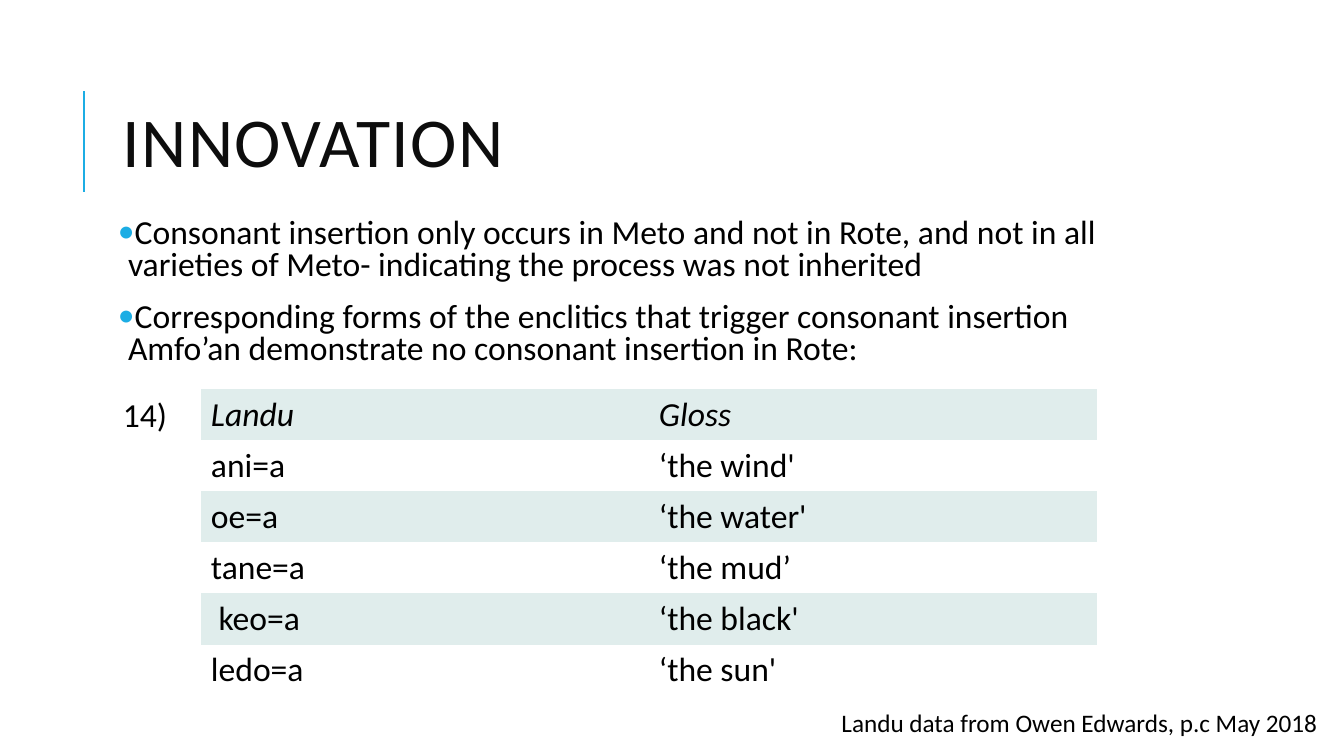
from typing import NamedTuple

from lxml import etree
from pptx import Presentation
from pptx import util as u
from pptx.dml.color import RGBColor
from pptx.enum import shapes, text
from pptx.oxml import ns

FONT = "Calibri"
BLACK = RGBColor(0x00, 0x00, 0x00)
TITLE_INK = RGBColor(0x0D, 0x0D, 0x0D)
ACCENT = RGBColor(0x1C, 0xAD, 0xE4)
BAND = RGBColor(0xE0, 0xED, 0xEC)
NO_GRID_STYLE = "{2D5ABB26-0587-4C30-8999-92F81FD0307C}"

BODY_SIZE = 24
ROW_HEIGHT = 36.5
COLUMN_WIDTH = 320
KEO_INDENT = 5.4


class TextBox(NamedTuple):
    left: float
    top: float
    width: float
    height: float
    paragraphs: list[str]
    size: float = BODY_SIZE
    color: RGBColor = BLACK
    wrap: bool = True


TITLE = TextBox(80.64, 46, 765.5, 118, ["INNOVATION"], 50, TITLE_INK)
BODY = TextBox(80.64, 152.64, 765.5, 117.5, [
    "Consonant insertion only occurs in Meto and not in Rote, and not in all "
    "varieties of Meto- indicating the process was not inherited",
    "Corresponding forms of the enclitics that trigger consonant insertion "
    "Amfo’an demonstrate no consonant insertion in Rote:",
])
SOURCE_NOTE = TextBox(594, 502, 355, 29,
                      ["Landu data from Owen Edwards, p.c May 2018"], 18, wrap=False)
EXAMPLE_NUMBER = TextBox(80.64, 278, 46, 36, ["14)"], wrap=False)

GLOSSES = [
    ("Landu", "Gloss"),
    ("ani=a", "‘the wind'"),
    ("oe=a", "‘the water'"),
    ("tane=a", "‘the mud’"),
    ("keo=a", "‘the black'"),
    ("ledo=a", "‘the sun'"),
]


def style_runs(para, size: float, color: RGBColor, italic: bool = False) -> None:
    for span in para.runs:
        span.font.name = FONT
        span.font.size = u.Pt(size)
        span.font.color.rgb = color
        span.font.italic = italic


def add_text(page, item: TextBox):
    box = page.shapes.add_textbox(u.Pt(item.left), u.Pt(item.top),
                                  u.Pt(item.width), u.Pt(item.height))
    frame = box.text_frame
    frame.word_wrap = item.wrap
    frame.text = "\n".join(item.paragraphs)
    for para in frame.paragraphs:
        style_runs(para, item.size, item.color)
    return frame


def add_title(page) -> None:
    frame = add_text(page, TITLE)
    frame.vertical_anchor = text.MSO_ANCHOR.MIDDLE
    para = frame.paragraphs[0]
    para.line_spacing = 0.8
    para.runs[0].font._element.set("spc", "100")


def add_bullet(para) -> None:
    props = para._p.get_or_add_pPr()
    props.set("marL", str(u.Pt(7.2)))
    props.set("indent", str(u.Pt(-7.2)))
    color = etree.SubElement(props, ns.qn("a:buClr"))
    etree.SubElement(color, ns.qn("a:srgbClr"), val=str(ACCENT))
    etree.SubElement(props, ns.qn("a:buFont"), typeface=FONT)
    etree.SubElement(props, ns.qn("a:buChar"), char="•")


def add_body(page) -> None:
    frame = add_text(page, BODY)
    frame.margin_left = frame.margin_right = u.Pt(3.6)
    frame.margin_top = frame.margin_bottom = u.Pt(3.6)
    for index, para in enumerate(frame.paragraphs):
        add_bullet(para)
        para.line_spacing = 0.8
        para.space_before = u.Pt(12 if index else 0)
        para.space_after = u.Pt(2)


def add_accent_line(page) -> None:
    line = page.shapes.add_connector(shapes.MSO_CONNECTOR.STRAIGHT,
                                     u.Pt(60), u.Pt(137), u.Pt(60), u.Pt(65))
    line.line.color.rgb = ACCENT
    line.line.width = u.Pt(1.5)
    etree.SubElement(line._element.spPr, ns.qn("a:effectLst"))


def add_gloss_table(page) -> None:
    holder = page.shapes.add_table(len(GLOSSES), 2, u.Pt(143.5), u.Pt(278),
                                   u.Pt(2 * COLUMN_WIDTH),
                                   u.Pt(ROW_HEIGHT * len(GLOSSES)))
    table = holder.table
    table.first_row = table.horz_banding = False
    next(holder._element.iter(ns.qn("a:tableStyleId"))).text = NO_GRID_STYLE
    for row, words in enumerate(GLOSSES):
        for column, word in enumerate(words):
            cell = table.cell(row, column)
            cell.text_frame.text = word
            style_runs(cell.text_frame.paragraphs[0], BODY_SIZE, BLACK, italic=row == 0)
            if row % 2 == 0:
                cell.fill.solid()
                cell.fill.fore_color.rgb = BAND
            else:
                cell.fill.background()
            if word == "keo=a":
                cell.margin_left = u.Pt(7.2 + KEO_INDENT)


def main() -> None:
    deck = Presentation()
    deck.slide_width, deck.slide_height = u.Pt(960), u.Pt(540)
    page = deck.slides.add_slide(deck.slide_layouts[6])
    add_accent_line(page)
    add_title(page)
    add_body(page)
    add_gloss_table(page)
    add_text(page, SOURCE_NOTE)
    add_text(page, EXAMPLE_NUMBER)
    deck.save("out.pptx")


if __name__ == "__main__":
    main()
